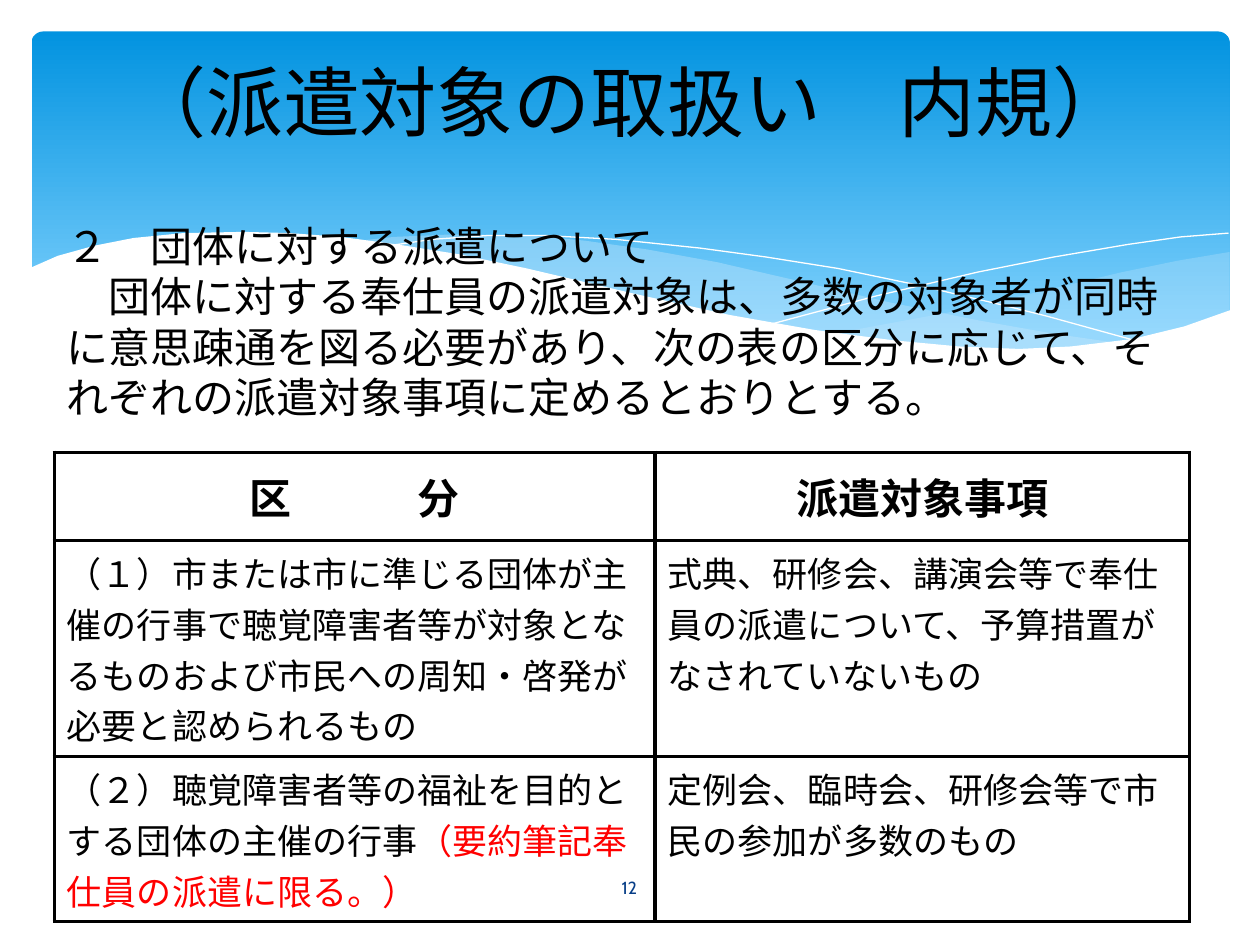
from lxml import etree
from pptx import Presentation
from pptx.dml.color import RGBColor
from pptx.enum.shapes import MSO_SHAPE
from pptx.enum.text import MSO_ANCHOR, MSO_AUTO_SIZE, PP_ALIGN
from pptx.oxml.ns import qn
from pptx.util import Pt

ROUND = MSO_SHAPE.ROUNDED_RECTANGLE
MID, TOP = MSO_ANCHOR.MIDDLE, MSO_ANCHOR.TOP
LEFT, MIDDLE = PP_ALIGN.LEFT, PP_ALIGN.CENTER
GROW = MSO_AUTO_SIZE.SHAPE_TO_FIT_TEXT
BLACK = RGBColor(0, 0, 0)
WHITE = RGBColor(255, 255, 255)
RED = RGBColor(255, 0, 0)
NAVY = RGBColor(0x07, 0x3E, 0x87)
BLUE = RGBColor(0x02, 0x93, 0xE0)
SKY = RGBColor(0x83, 0xD3, 0xFE)
PALE = RGBColor(0xC6, 0xE7, 0xFC)

RIGHT_WAVE = [
    (702.7, 144), (673, 149), (641.5, 155.5), (599, 165.6), (542, 178.6),
    (476, 190.8), (507.6, 195), (536.4, 198), (570, 199.4), (607.7, 199.4),
    (640, 195.8), (668, 190), (693.4, 181.4), (702.7, 177.8)]
LONG_WAVE = [
    (643, 196.6), (602.6, 190.8), (558, 182.9), (508.3, 172.8), (452.9, 159.8),
    (409.7, 149.8), (370, 142.6), (334, 137.5), (302.4, 134.6), (260, 133.9),
    (225.4, 135.4), (206, 137.5), (246.2, 143.3), (290.9, 151.9),
    (323.3, 159.8), (381.6, 172.8), (432.7, 183.6), (478.8, 191.5),
    (519.8, 197.3), (556.6, 200.2), (589, 200.9), (617, 199.4)]
FALL_LINE = [
    (222.5, 140.4), (247, 136.8), (278.6, 134.6), (311.8, 134.6), (352, 136.8),
    (400.3, 141.8), (437.8, 146.9), (478.8, 153.4), (523.4, 162.7),
    (572.4, 174.2), (598.3, 180.7), (653, 195.8)]
RISE_LINE = [
    (441.4, 185), (500.4, 169.2), (558.7, 155.5), (602, 146.9),
    (644.4, 139.7), (674.6, 135.4), (702, 133.2)]
WHITE_WAVE = [
    (703.4, 177.1), (676.8, 186.5), (647.3, 193.7), (612, 198), (582.5, 199.4),
    (547.9, 198), (509.8, 194.4), (465.8, 188.6), (416.9, 180), (362.2, 167.8),
    (301, 153.4), (262.8, 145.4), (226.8, 139.7), (195, 135.4), (165.6, 133.2),
    (139, 132.5), (105, 133.2), (76.3, 136), (54, 140.4), (33, 146.2),
    (16.6, 153.4), (16.6, 236.9), (703.4, 236.9)]

ROWS = [
    [[("区　　　分", BLACK)], [("派遣対象事項", BLACK)]],
    [[("（１）市または市に準じる団体が主催の行事で聴覚障害者等が対象となるものおよび"
       "市民への周知・啓発が必要と認められるもの", BLACK)],
     [("式典、研修会、講演会等で奉仕員の派遣について、予算措置がなされていないもの", BLACK)]],
    [[("（２）聴覚障害者等の福祉を目的とする団体の主催の行事", BLACK),
      ("（要約筆記奉仕員の派遣に限る。）", RED)],
     [("定例会、臨時会、研修会等で市民の参加が多数のもの", BLACK)]],
]


class Deck:
    font = "Cabin"
    grid_font = "Calibri"
    edge = 2.25

    def __init__(self, slide):
        self.slide = slide
        self.shapes = slide.shapes

    def style(self, run, size, color, name, bold=False):
        font = run.font
        font.size, font.name, font.bold = Pt(size), name, bold
        font.color.rgb = color

    def panel(self, x, y, w, h):
        shape = self.shapes.add_shape(ROUND, Pt(x), Pt(y), Pt(w), Pt(h))
        shape.adjustments[0] = 0.034
        shape.shadow.inherit = False
        shape.line.fill.background()
        shape.fill.gradient()
        shape.fill.gradient_angle = 270
        for stop, place, color in zip(shape.fill.gradient_stops, (0, 0.9), (BLUE, SKY)):
            stop.position = place
            stop.color.rgb = color

    def outline(self, points, closed):
        spots = [(Pt(x), Pt(y)) for x, y in points]
        pen = self.shapes.build_freeform(*spots[0])
        pen.add_line_segments(spots[1:], close=closed)
        shape = pen.convert_to_shape()
        shape.shadow.inherit = False
        return shape

    def wave(self, points, color, alpha=100):
        shape = self.outline(points, True)
        shape.line.fill.background()
        shape.fill.solid()
        shape.fill.fore_color.rgb = color
        if alpha < 100:
            tint = shape.fill._xPr.find(qn("a:solidFill"))[0]
            etree.SubElement(tint, qn("a:alpha")).set("val", str(alpha * 1000))

    def curve(self, points):
        shape = self.outline(points, False)
        shape.fill.background()
        shape.line.color.rgb = WHITE
        shape.line.width = Pt(0)

    def text(self, x, y, w, h, lines, size, color=BLACK, align=MIDDLE, anchor=MID, grow=False):
        frame = self.shapes.add_textbox(Pt(x), Pt(y), Pt(w), Pt(h)).text_frame
        frame.word_wrap = True
        frame.vertical_anchor = anchor
        if grow:
            frame.auto_size = GROW
        frame.text = "\n".join(lines)
        for para in frame.paragraphs:
            para.alignment = align
            for run in para.runs:
                self.style(run, size, color, self.font)

    def border(self, cell):
        props = cell._tc.get_or_add_tcPr()
        for spot, side in enumerate(("lnL", "lnR", "lnT", "lnB")):
            line = etree.Element(qn("a:" + side), w=str(Pt(self.edge)))
            fill = etree.SubElement(line, qn("a:solidFill"))
            etree.SubElement(fill, qn("a:srgbClr"), val=str(BLACK))
            props.insert(spot, line)

    def cell(self, cell, parts, head):
        size = 24 if head else 20
        cell.fill.background()
        self.border(cell)
        cell.vertical_anchor = MID if head else TOP
        para = cell.text_frame.paragraphs[0]
        para.alignment = MIDDLE if head else LEFT
        para.space_before = Pt(size * 0.2)
        for words, color in parts:
            run = para.add_run()
            run.text = words
            self.style(run, size, color, self.grid_font, head)

    def table(self, x, y, wide, tall, rows):
        frame = self.shapes.add_table(
            len(tall), len(wide), Pt(x), Pt(y), Pt(sum(wide)), Pt(sum(tall)))
        grid = frame.table
        grid.first_row = grid.horz_banding = False
        for col, width in zip(grid.columns, wide):
            col.width = Pt(width)
        for row, height, items in zip(grid.rows, tall, rows):
            row.height = Pt(height)
            for cell, parts in zip(row.cells, items):
                self.cell(cell, parts, items is rows[0])


def main():
    show = Presentation()
    show.slide_width, show.slide_height = Pt(720), Pt(540)
    deck = Deck(show.slides.add_slide(show.slide_layouts[6]))
    deck.panel(18, 18, 684.7, 194.4)
    deck.wave(RIGHT_WAVE, PALE, 29)
    deck.wave(LONG_WAVE, PALE, 40)
    deck.curve(FALL_LINE)
    deck.curve(RISE_LINE)
    deck.wave(WHITE_WAVE, WHITE)
    deck.text(313.9, 492.5, 91.4, 28.8, ["12"], 10, NAVY)
    deck.text(36, 26.6, 648, 62, ["（派遣対象の取扱い　内規）"], 44)
    deck.table(31, 258.5, [343.4, 305.3], [50.4, 123.4, 94.3], ROWS)
    deck.text(31, 122.4, 646.6, 122.4, [
        "２　団体に対する派遣について",
        "　団体に対する奉仕員の派遣対象は、多数の対象者が同時に意思疎通を図る必要があり、"
        "次の表の区分に応じて、それぞれの派遣対象事項に定めるとおりとする。",
    ], 24, align=LEFT, anchor=TOP, grow=True)
    show.save("out.pptx")


if __name__ == "__main__":
    main()
